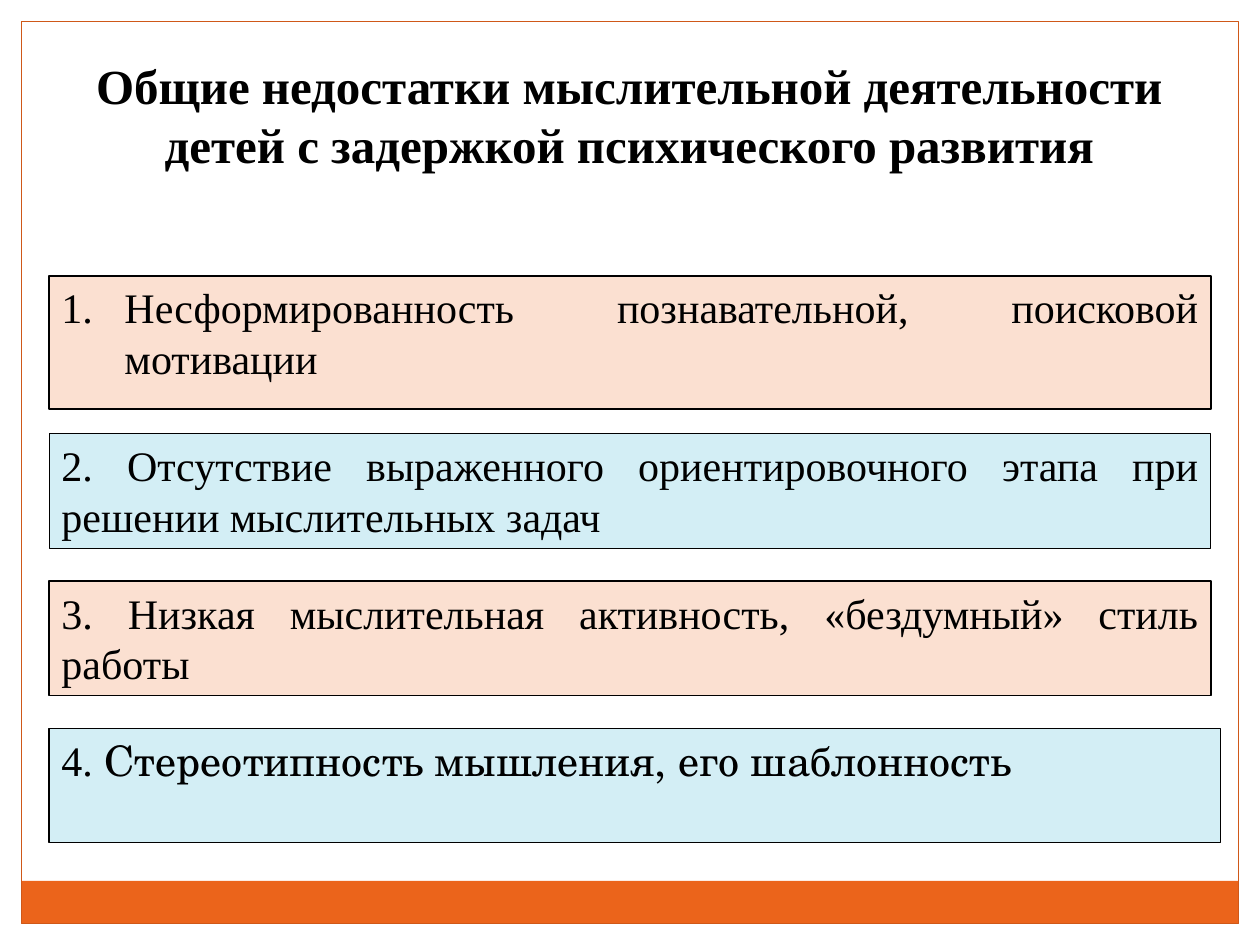
from lxml.etree import SubElement
from pptx import Presentation
from pptx.dml.color import RGBColor
from pptx.enum.shapes import MSO_SHAPE
from pptx.enum.text import MSO_ANCHOR, MSO_AUTO_SIZE, PP_ALIGN
from pptx.oxml.ns import qn
from pptx.util import Cm, Pt

BLACK = RGBColor(0x00, 0x00, 0x00)
ORANGE = RGBColor(0xEB, 0x64, 0x1B)
DARK_ORANGE = RGBColor(0xCF, 0x58, 0x18)
PEACH = RGBColor(0xFB, 0xE0, 0xD1)
SKY = RGBColor(0xD3, 0xEE, 0xF5)

SERIF = "Times New Roman"
SCHOOL = "TeX Gyre Schola"

TITLE = ["Общие недостатки мыслительной деятельности",
         "детей с задержкой психического развития"]

# top, width, height (cm), fill, line width (pt), numbered, spans of (text, font)
CARDS = [
    (5.56, 23.42, 2.69, PEACH, 1, True,
     [("Несформированность познавательной, поисковой мотивации", SERIF)]),
    (8.74, 23.42, 2.31, SKY, 0.5, False,
     [("2. Отсутствие выраженного ориентировочного этапа при решении "
       "мыслительных задач", SERIF)]),
    (11.71, 23.42, 2.31, PEACH, 1, False,
     [("3. Низкая мыслительная активность, «бездумный» стиль работы", SERIF)]),
    (14.68, 23.62, 2.31, SKY, 0.75, False,
     [("4.", SERIF), (" Стереотипность мышления, его шаблонность", SCHOOL)]),
]
CARD_LEFT = 0.99


def add_box(page, left, top, width, height, fill=None, line=None, weight=0.75):
    """Add a plain rectangle, measured in centimetres."""
    box = page.shapes.add_shape(MSO_SHAPE.RECTANGLE, Cm(left), Cm(top),
                                Cm(width), Cm(height))
    box.shadow.inherit = False
    if fill is None:
        box.fill.background()
    else:
        box.fill.solid()
        box.fill.fore_color.rgb = fill
    if line is None:
        box.line.fill.background()
    else:
        box.line.color.rgb = line
        box.line.width = Pt(weight)
    return box


def format_span(span, font, size, bold=False):
    span.font.name = font
    span.font.size = Pt(size)
    span.font.bold = bold
    span.font.color.rgb = BLACK


def number_paragraph(para, indent):
    """Give the paragraph automatic numbering with a hanging indent."""
    properties = para._p.get_or_add_pPr()
    properties.set("marL", str(indent))
    properties.set("indent", str(-indent))
    SubElement(properties, qn("a:buFont"), typeface="+mj-lt")
    SubElement(properties, qn("a:buAutoNum"), type="arabicPeriod")


def add_frame(page, left, top, width, height):
    bar_height = 0.86
    add_box(page, left, top + height - bar_height, width, bar_height, fill=ORANGE)
    add_box(page, left, top, width, height, line=DARK_ORANGE)


def set_title(page, left, top, width, height):
    title = page.shapes.title
    title.left, title.top = Cm(left), Cm(top)
    title.width, title.height = Cm(width), Cm(height)
    frame = title.text_frame
    frame.text = "\n".join(TITLE)
    frame.word_wrap = True
    frame.auto_size = MSO_AUTO_SIZE.NONE
    frame.vertical_anchor = MSO_ANCHOR.TOP
    for para in frame.paragraphs:
        para.alignment = PP_ALIGN.CENTER
        for span in para.runs:
            format_span(span, SERIF, 28, bold=True)


def add_card(page, left, top, width, height, fill, weight, numbered, spans):
    box = add_box(page, left, top, width, height, fill, BLACK, weight)
    frame = box.text_frame
    frame.word_wrap = True
    frame.vertical_anchor = MSO_ANCHOR.TOP
    para = frame.paragraphs[0]
    para.alignment = PP_ALIGN.JUSTIFY
    if numbered:
        number_paragraph(para, Cm(1.27))
    for text, font in spans:
        span = para.add_run()
        span.text = text
        format_span(span, font, 24)


def main():
    deck = Presentation()
    deck.slide_width, deck.slide_height = Cm(25.4), Cm(19.05)
    page = deck.slides.add_slide(deck.slide_layouts.get_by_name("Title Only"))
    add_frame(page, 0.43, 0.43, 24.54, 18.19)
    set_title(page, 0.58, 0.99, 24.21, 2.64)
    for card in CARDS:
        add_card(page, CARD_LEFT, *card)
    deck.save("out.pptx")


if __name__ == "__main__":
    main()
